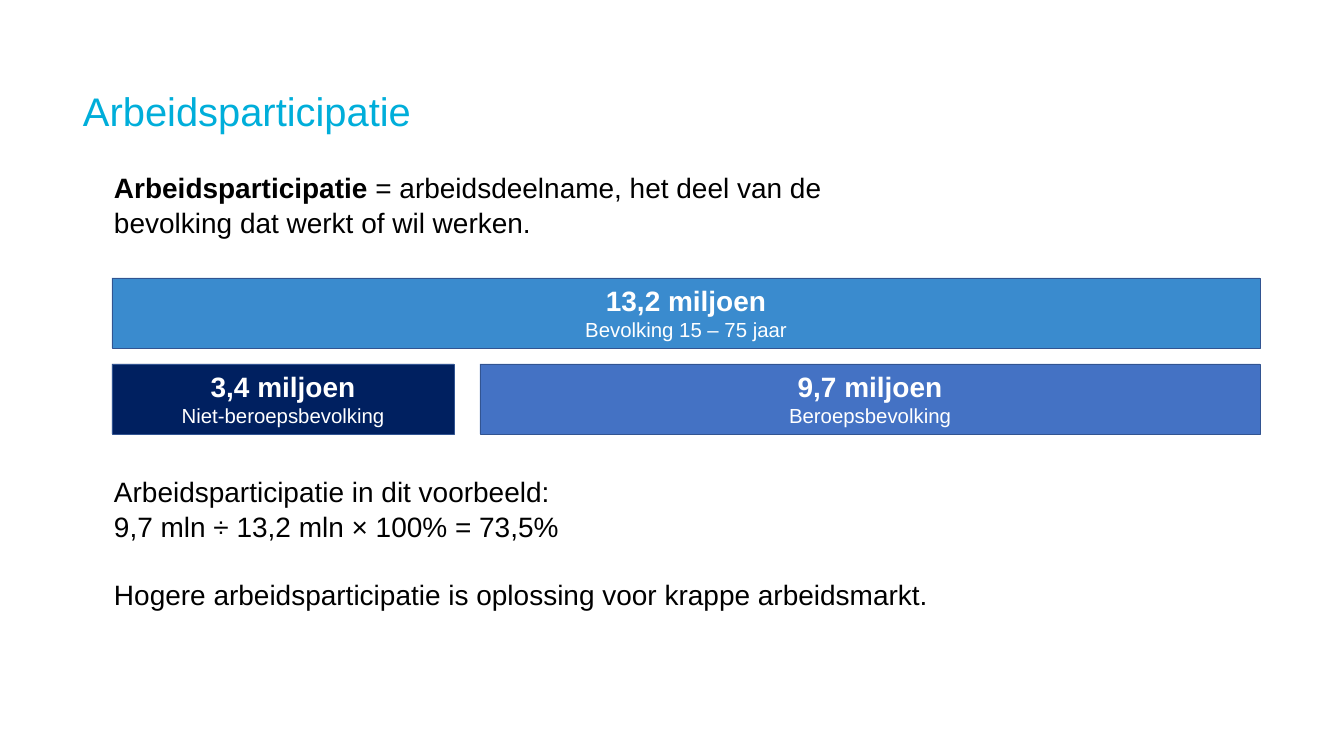
from pptx import Presentation
from pptx import util as u
from pptx.dml.color import RGBColor
from pptx.enum import shapes, text

PX = 14966  # EMU per px
FONT = "Arial"
TITLE_SIZE, BODY_SIZE, LABEL_SIZE = 47, 33, 24
LINE_SPACING, BLOCK_GAP = 1.04, 39.5

TITLE = "Arbeidsparticipatie"
TERM = "Arbeidsparticipatie"
MEANING = " = arbeidsdeelname, het deel van de bevolking dat werkt of wil werken."
EXAMPLE = [
    "Arbeidsparticipatie in dit voorbeeld:",
    "9,7 mln ÷ 13,2 mln × 100% = 73,5%",
]
CONCLUSION = "Hogere arbeidsparticipatie is oplossing voor krappe arbeidsmarkt."

# Rows of bars: amount, group, width, fill
BAR_ROWS = [
    [("13,2 miljoen", "Bevolking 15 – 75 jaar", 1148, "3A8BCE")],
    [("3,4 miljoen", "Niet-beroepsbevolking", 342, "002060"),
     ("9,7 miljoen", "Beroepsbevolking", 780, "4472C4")],
]
BARS_LEFT, BARS_TOP, BAR_HEIGHT, ROW_STEP, BAR_GAP = 112, 278, 70, 86, 26
BAR_LINE = "325491"


def color(value):
    return RGBColor.from_string(value)


def emu(*lengths):
    return [length * PX for length in lengths]


def style(paragraph, size, value, bold=False):
    font = paragraph.font
    font.name, font.size, font.bold = FONT, u.Pt(size), bold
    font.color.rgb = color(value)


def add_frame(slide, box, anchor=text.MSO_ANCHOR.TOP):
    """Add a wrapping text box without margins and return its text frame."""
    frame = slide.shapes.add_textbox(*emu(*box)).text_frame
    frame.word_wrap = True
    frame.vertical_anchor = anchor
    frame.margin_left = frame.margin_right = 0
    frame.margin_top = frame.margin_bottom = 0
    return frame


def fill_lines(frame, lines):
    """Write (text, size, colour, bold) lines and return their paragraphs."""
    for i, (line, *look) in enumerate(lines):
        paragraph = frame.add_paragraph() if i else frame.paragraphs[0]
        paragraph.text = line
        style(paragraph, *look)
    return frame.paragraphs


def add_bar(slide, left, top, width, amount, group, fill):
    bar = slide.shapes.add_shape(
        shapes.MSO_SHAPE.RECTANGLE, *emu(left, top, width, BAR_HEIGHT))
    bar.shadow.inherit = False
    bar.fill.solid()
    bar.fill.fore_color.rgb = color(fill)
    bar.line.color.rgb = color(BAR_LINE)
    bar.line.width = u.Pt(1)
    frame = bar.text_frame
    frame.word_wrap = True
    frame.vertical_anchor = text.MSO_ANCHOR.MIDDLE
    lines = [(amount, BODY_SIZE, "FFFFFF", True), (group, LABEL_SIZE, "FFFFFF")]
    for paragraph in fill_lines(frame, lines):
        paragraph.alignment = text.PP_ALIGN.CENTER


def main():
    deck = Presentation()
    deck.slide_width, deck.slide_height = emu(1344, 756)
    slide = deck.slides.add_slide(deck.slide_layouts[6])

    title = add_frame(slide, (83, 83, 1176, 56), text.MSO_ANCHOR.MIDDLE)
    fill_lines(title, [(TITLE, TITLE_SIZE, "00AEDA")])

    definition = add_frame(slide, (114, 169, 728, 68)).paragraphs[0]
    definition.line_spacing = LINE_SPACING
    style(definition, BODY_SIZE, "000000")
    term = definition.add_run()
    term.text = TERM
    term.font.bold = True
    definition.add_run().text = MEANING

    for row, bars in enumerate(BAR_ROWS):
        left = BARS_LEFT
        for amount, group, width, fill in bars:
            add_bar(slide, left, BARS_TOP + row * ROW_STEP, width, amount, group, fill)
            left += width + BAR_GAP

    explanation = fill_lines(
        add_frame(slide, (114, 473, 833, 177)),
        [(line, BODY_SIZE, "000000") for line in EXAMPLE + [CONCLUSION]])
    for paragraph in explanation:
        paragraph.line_spacing = LINE_SPACING
    explanation[-1].space_before = u.Pt(BLOCK_GAP)

    deck.save("out.pptx")


if __name__ == "__main__":
    main()
